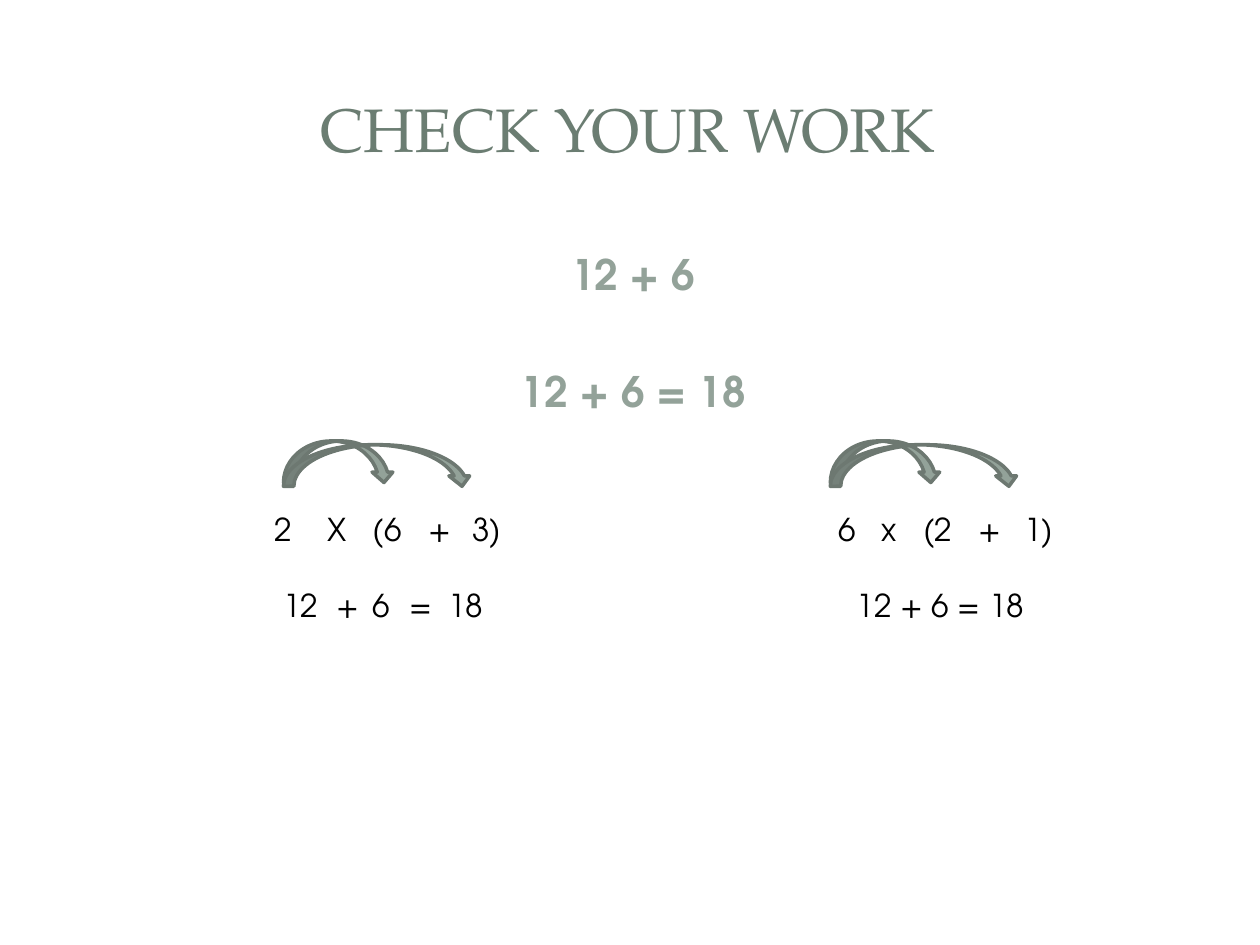
from dataclasses import dataclass

from lxml import etree
from pptx import Presentation
from pptx.dml.color import RGBColor
from pptx.enum.shapes import MSO_SHAPE
from pptx.enum.text import MSO_ANCHOR, PP_ALIGN
from pptx.oxml.ns import qn
from pptx.util import Inches, Pt

CENTER, LEFT = PP_ALIGN.CENTER, PP_ALIGN.LEFT
TOP, MIDDLE = MSO_ANCHOR.TOP, MSO_ANCHOR.MIDDLE
CURVED_ARROW = MSO_SHAPE.CURVED_DOWN_ARROW

DARK_SAGE = RGBColor(0x6B, 0x7D, 0x72)
SAGE = RGBColor(0x93, 0xA2, 0x99)
ARROW_EDGE = RGBColor(0x6D, 0x78, 0x71)
BLACK = RGBColor(0, 0, 0)

CELL = Inches(0.1)  # the slide is a grid of 100 columns and 75 rows
COLUMNS, ROWS = 100, 75

TITLE_FONT = {"name": "TeX Gyre Pagella", "size": Pt(35)}
ANSWER_FONT = {"name": "TeX Gyre Adventor", "size": Pt(24), "bold": True}
WORKING_FONT = {"name": "TeX Gyre Adventor", "size": Pt(18)}


@dataclass(frozen=True)
class Area:
    column: float
    row: float
    width: float
    height: float

    def emu(self) -> list[int]:
        return [round(n * CELL) for n in (self.column, self.row, self.width, self.height)]


@dataclass(frozen=True)
class Line:
    """Terms of an expression, each starting at its own column of the text."""
    terms: tuple[str, ...]
    starts: tuple[float, ...] = (0,)
    space_before: float = 0


@dataclass(frozen=True)
class Working:
    column: float
    lines: tuple[Line, Line]


WORKINGS = (
    Working(20.8, (
        Line(("2", "X", "(6", "+", "3)"), (0, 4.2, 7.8, 12.2, 15.7)),
        Line(("12", "+", "6", "=", "18"), (0.7, 4.9, 7.8, 10.7, 13.8), 21.7),
    )),
    Working(64.2, (
        Line(("6", "x", "(2", "+", "1)"), (1.4, 4.8, 8.1, 12.5, 16.1)),
        Line(("12 + 6 = 18",), (2.8,), 21.7),
    )),
)
ARROW_SPANS = ((35, 8.8), (35.3, 15))  # row and width


def add_tab_stops(paragraph, starts: list[float]) -> None:
    tab_list = etree.SubElement(paragraph._p.get_or_add_pPr(), qn("a:tabLst"))
    for start in starts:
        etree.SubElement(tab_list, qn("a:tab"), pos=str(round(start * CELL)), algn="l")


def add_lines(slide, area: Area, lines: tuple[Line, ...], font: dict, color: RGBColor,
              align=LEFT, anchor=TOP) -> None:
    frame = slide.shapes.add_textbox(*area.emu()).text_frame
    frame.word_wrap = True
    frame.vertical_anchor = anchor
    for index, line in enumerate(lines):
        paragraph = frame.add_paragraph() if index else frame.paragraphs[0]
        paragraph.alignment = align
        paragraph.space_before = Pt(line.space_before)
        stops = [start for start in line.starts if start]
        if stops:
            add_tab_stops(paragraph, stops)
        run = paragraph.add_run()
        run.text = ("\t" if line.starts[0] else "") + "\t".join(line.terms)
        for attribute, value in font.items():
            setattr(run.font, attribute, value)
        run.font.color.rgb = color


def add_arrow(slide, area: Area) -> None:
    arrow = slide.shapes.add_shape(CURVED_ARROW, *area.emu())
    arrow.shadow.inherit = False
    arrow.fill.solid()
    arrow.fill.fore_color.rgb = SAGE
    arrow.line.color.rgb = ARROW_EDGE
    arrow.line.width = Pt(2)


def main() -> None:
    deck = Presentation()
    deck.slide_width, deck.slide_height = COLUMNS * CELL, ROWS * CELL
    slide = deck.slides.add_slide(deck.slide_layouts[6])

    add_lines(slide, Area(4.7, 4.5, 90.3, 11.4), (Line(("CHECK YOUR WORK",)),),
              TITLE_FONT, DARK_SAGE, CENTER, MIDDLE)
    answers = (Line(("12 + 6",), space_before=4.8),
               Line(("12 + 6 = 18",), space_before=38.5))
    add_lines(slide, Area(5.5, 19.2, 89.5, 47.8), answers, ANSWER_FONT, SAGE, CENTER)

    for working in WORKINGS:
        for row, width in ARROW_SPANS:
            add_arrow(slide, Area(working.column + 1.7, row, width, 3.3))
        add_lines(slide, Area(working.column, 40, 20.9, 10.1), working.lines,
                  WORKING_FONT, BLACK)

    deck.save("out.pptx")


if __name__ == "__main__":
    main()
